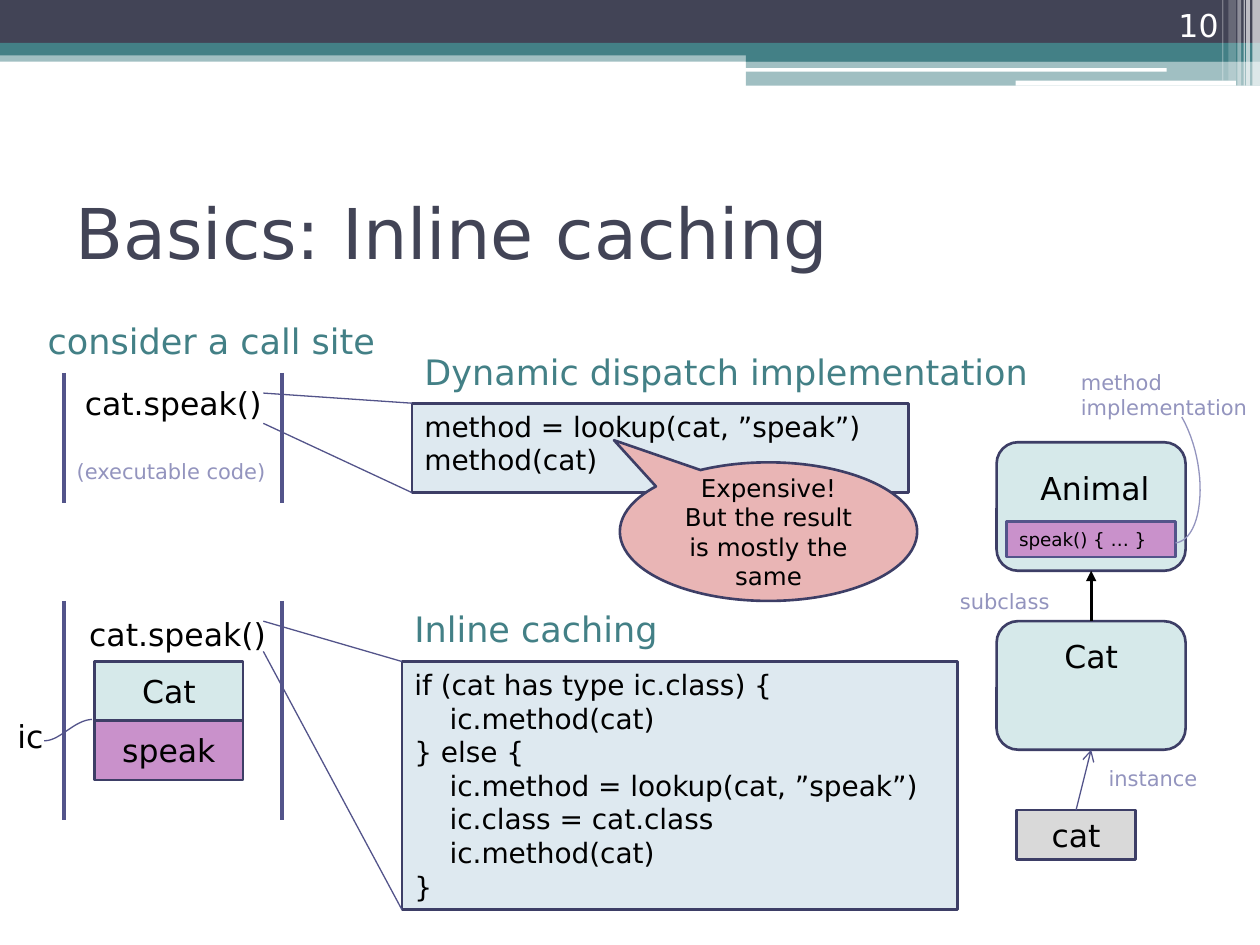
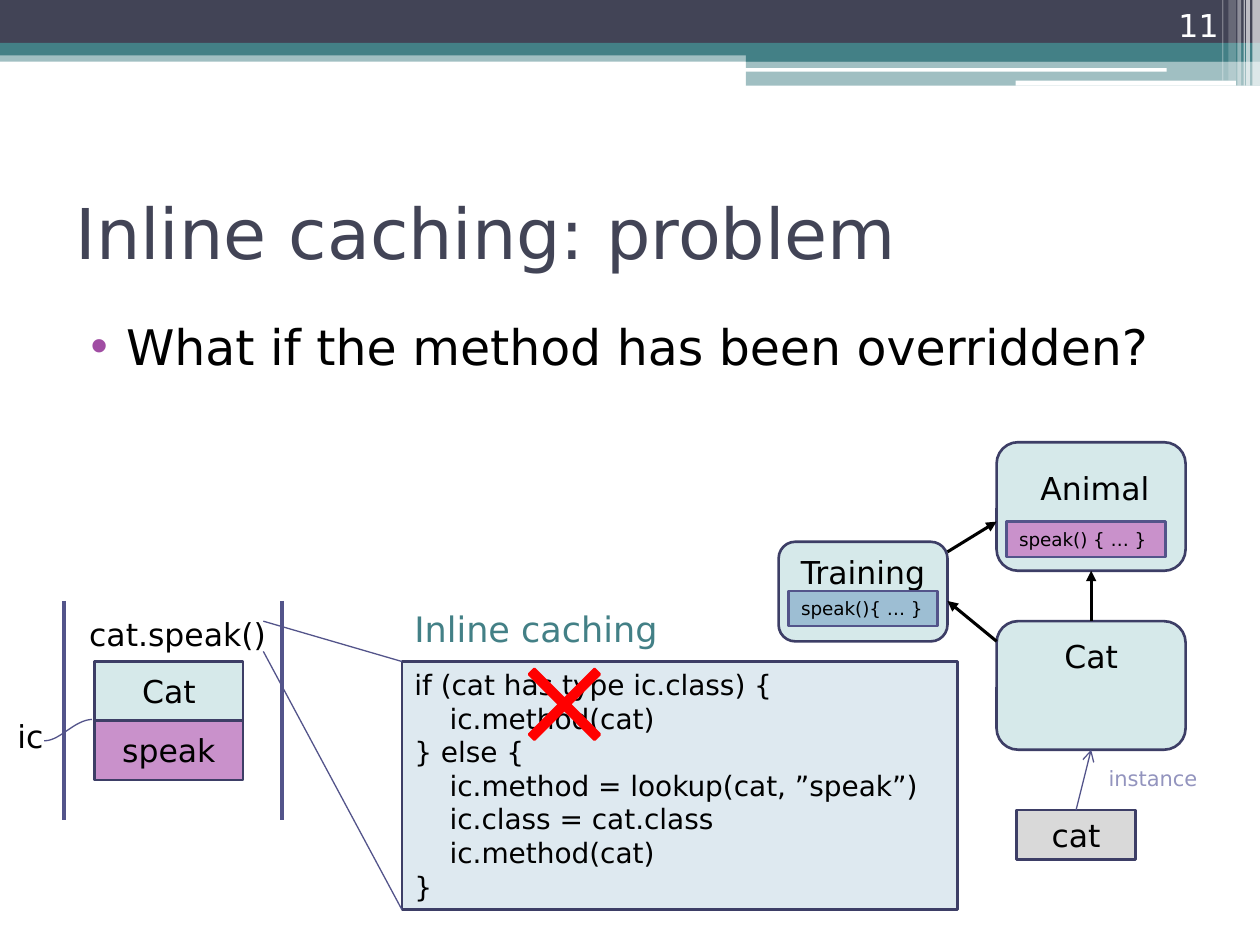
"""Builds two slides on inline caching, with call sites, code panels and a class diagram."""
from dataclasses import dataclass

from lxml.etree import SubElement
from pptx import Presentation
from pptx.dml.color import RGBColor
from pptx.enum.shapes import MSO_CONNECTOR, MSO_SHAPE as Kind
from pptx.enum.text import MSO_ANCHOR as Anchor, MSO_AUTO_SIZE as AutoSize, PP_ALIGN as Align
from pptx.oxml.ns import qn
from pptx.util import Inches, Pt


@dataclass(frozen=True)
class Theme:
    font: str = "DejaVu Sans"
    ink: str = "000000"
    paper: str = "FFFFFF"
    slate: str = "424456"
    teal: str = "438086"
    edge: str = "3D3E66"
    rail: str = "53548A"
    note: str = "9394BE"
    code_fill: str = "DEE9F0"
    class_fill: str = "D6E9EA"
    method_fill: str = "C991CB"
    override_fill: str = "9DBED3"
    object_fill: str = "D9D9D9"
    callout_fill: str = "E9B5B5"
    bullet: str = "A04DA3"
    cross: str = "FF0000"
    title_size: float = 40
    body_size: float = 28
    heading_size: float = 20
    label_size: float = 18
    code_size: float = 16
    callout_size: float = 14
    note_size: float = 12
    method_size: float = 10.5


THEME = Theme()
INDENT = 0.28

TITLES = {10: "Basics: Inline caching", 11: "Inline caching: problem"}
QUESTION = "What if the method has been overridden?"
CALL = "cat.speak()"
CALLOUT = ["Expensive!", "But the result is mostly the same"]

DISPATCH = {
    "heading": ("Dynamic dispatch implementation", (3.27, 2.73, 5.2, 0.44)),
    "at": (3.27, 3.2, 3.94, 0.71),
    "code": [(0, "method = lookup(cat, ”speak”)"), (0, "method(cat)")],
    "call_edges": (3.12, 3.36),
}
CACHING = {
    "heading": ("Inline caching", (3.19, 4.77, 5.2, 0.44)),
    "at": (3.19, 5.25, 4.41, 1.97),
    "code": [
        (0, "if (cat has type ic.class) {"),
        (1, "ic.method(cat)"),
        (0, "} else {"),
        (1, "ic.method = lookup(cat, ”speak”)"),
        (1, "ic.class = cat.class"),
        (1, "ic.method(cat)"),
        (0, "}"),
    ],
    "call_edges": (4.93, 5.17),
}
CACHE_CELLS = [("Cat", THEME.class_fill), ("speak", THEME.method_fill)]
CLASSES = [("Animal", 3.51, (7.97, 3.67, 1.44, 0.4)), ("Cat", 4.93, (7.97, 5.01, 1.38, 0.4))]
DISPATCH_NOTES = [
    (["(executable code)"], (0.51, 3.59, 1.72, 0.3)),
    (["subclass"], (7.52, 4.62, 0.91, 0.3)),
    (["method", "implementation"], (8.48, 2.88, 1.52, 0.5)),
]
CACHE_CURVE = [(0.73, 5.71), (0.58, 5.72), (0.48, 5.88), (0.35, 5.88)]
METHOD_CURVE = [(9.38, 3.31), (9.6, 3.7), (9.56, 4.28), (9.33, 4.31)]

BANDS = [
    ((0, 0.4, 10, 0.09), THEME.teal, 50),
    ((0, 0, 10, 0.34), THEME.slate, 100),
    ((0, 0.34, 10, 0.1), THEME.teal, 100),
    ((5.92, 0.39, 4.08, 0.1), THEME.teal, 100),
    ((5.92, 0.48, 4.08, 0.2), THEME.teal, 50),
    ((5.91, 0.54, 3.35, 0.03), THEME.paper, 100),
    ((8.06, 0.64, 1.75, 0.04), THEME.paper, 100),
]
STRIPES = [
    (9.94, 0.06, 0.68, 65),
    (9.89, 0.03, 0.68, 65),
    (9.87, 0.01, 0.68, 60),
    (9.82, 0.03, 0.68, 40),
    (9.75, 0.06, 0.64, 20),
    (9.7, 0.01, 0.64, 30),
]


def inches(values):
    return [Inches(value) for value in values]


def rgb(color):
    return RGBColor.from_string(color)


def write(frame, lines, size, color=THEME.ink, align=Align.LEFT, anchor=Anchor.TOP, wrap=True):
    frame.auto_size = AutoSize.NONE
    frame.word_wrap = wrap
    frame.vertical_anchor = anchor
    for number, line in enumerate(lines):
        level, text = line if isinstance(line, tuple) else (0, line)
        para = frame.add_paragraph() if number else frame.paragraphs[0]
        para.text = text
        para.alignment = align
        para.font.name = THEME.font
        para.font.size = Pt(size)
        para.font.color.rgb = rgb(color)
        if level:
            para._p.get_or_add_pPr().set("marL", str(Inches(INDENT * level)))


def add_label(page, lines, at, size=THEME.label_size, color=THEME.ink, **style):
    box = page.shapes.add_textbox(*inches(at))
    write(box.text_frame, lines, size, color, **style)


def add_box(page, kind, at, fill, edge=THEME.edge, lines=(), size=THEME.label_size,
            align=Align.CENTER, anchor=Anchor.MIDDLE):
    box = page.shapes.add_shape(kind, *inches(at))
    box.shadow.inherit = False
    box.fill.solid()
    box.fill.fore_color.rgb = rgb(fill)
    if edge:
        box.line.color.rgb = rgb(edge)
        box.line.width = Pt(1.5)
    else:
        box.line.fill.background()
    write(box.text_frame, lines, size, align=align, anchor=anchor)
    return box


def add_line(page, start, end, color=THEME.rail, width=0.75, tail=None):
    line = page.shapes.add_connector(MSO_CONNECTOR.STRAIGHT, *inches(start + end))
    line.line.color.rgb = rgb(color)
    line.line.width = Pt(width)
    properties = line._element.spPr
    if tail:
        SubElement(properties.find(qn("a:ln")), qn("a:tailEnd"), type=tail)
    SubElement(properties, qn("a:effectLst"))
    return line


def add_subclass_arrow(page, start, end):
    return add_line(page, start, end, THEME.ink, 1.75, "triangle")


def add_curve(page, controls, color, steps=24):
    points = []
    for step in range(steps + 1):
        t = step / steps
        weights = ((1 - t) ** 3, 3 * t * (1 - t) ** 2, 3 * t * t * (1 - t), t ** 3)
        points.append(inches(sum(w * point[axis] for w, point in zip(weights, controls))
                             for axis in (0, 1)))
    builder = page.shapes.build_freeform(*points[0])
    builder.add_line_segments(points[1:], close=False)
    curve = builder.convert_to_shape()
    curve.shadow.inherit = False
    curve.fill.background()
    curve.line.color.rgb = rgb(color)
    curve.line.width = Pt(0.75)


def add_band(page, at, color, opacity):
    band = add_box(page, Kind.RECTANGLE, at, color, edge=None)
    if opacity < 100:
        tint = band._element.spPr.find(qn("a:solidFill")).find(qn("a:srgbClr"))
        SubElement(tint, qn("a:alpha"), val=str(opacity * 1000))


def place(holder, at):
    holder.left, holder.top, holder.width, holder.height = inches(at)


def start_page(deck, number, layout):
    page = deck.slides.add_slide(deck.slide_layouts[layout])
    for band in BANDS:
        add_band(page, *band)
    for left, width, height, opacity in STRIPES:
        add_band(page, (left, 0, width, height), THEME.paper, opacity)
    title = page.shapes.title
    place(title, (0.5, 1.25, 9, 1.17))
    write(title.text_frame, [TITLES[number]], THEME.title_size, THEME.slate, anchor=Anchor.MIDDLE)
    add_label(page, [str(number)], (8.94, 0, 0.83, 0.4), color=THEME.paper,
              align=Align.RIGHT, anchor=Anchor.BOTTOM)
    return page


def add_rails(page, top, bottom):
    for x in (0.51, 2.24):
        add_line(page, (x, top), (x, bottom), width=2)


def add_panel(page, panel):
    heading, heading_at = panel["heading"]
    left, top, _, height = panel["at"]
    add_box(page, Kind.RECTANGLE, panel["at"], THEME.code_fill, lines=panel["code"],
            size=THEME.code_size, align=Align.LEFT, anchor=Anchor.TOP)
    add_label(page, [heading], heading_at, THEME.heading_size, THEME.teal)
    for call_y, panel_y in zip(panel["call_edges"], (top, top + height)):
        add_line(page, (2.09, call_y), (left, panel_y))


def add_inline_cache(page):
    add_label(page, ["ic"], (0.04, 5.64, 0.4, 0.4), wrap=False)
    add_curve(page, CACHE_CURVE, THEME.rail)
    add_rails(page, 4.77, 6.51)
    add_label(page, [CALL], (0.59, 4.83, 1.64, 0.29), align=Align.CENTER, wrap=False)
    add_panel(page, CACHING)
    for row, (text, fill) in enumerate(CACHE_CELLS):
        add_box(page, Kind.RECTANGLE, (0.75, 5.25 + 0.47 * row, 1.18, 0.47), fill, lines=[text])


def add_method(page, text, at, fill):
    add_box(page, Kind.RECTANGLE, at, fill, THEME.rail, [text], THEME.method_size,
            Align.LEFT, Anchor.TOP)


def add_class_diagram(page, method_width):
    boxes = []
    for name, top, label_at in CLASSES:
        boxes.append(add_box(page, Kind.ROUNDED_RECTANGLE, (7.91, top, 1.5, 1.02),
                             THEME.class_fill))
        add_label(page, [name], label_at, align=Align.CENTER)
    animal, cat_class = boxes
    inherits = add_subclass_arrow(page, (8.66, 4.93), (8.66, 4.53))
    inherits.begin_connect(cat_class, 0)
    inherits.end_connect(animal, 2)
    cat = add_box(page, Kind.FLOWCHART_PROCESS, (8.07, 6.43, 0.94, 0.39), THEME.object_fill,
                  lines=["cat"])
    instance = add_line(page, (8.54, 6.43), (8.66, 5.95), tail="arrow")
    instance.begin_connect(cat, 0)
    instance.end_connect(cat_class, 2)
    add_label(page, ["instance"], (8.7, 6.03, 0.9, 0.3), THEME.note_size, THEME.note, wrap=False)
    add_method(page, "speak() { … }", (7.99, 4.14, method_width, 0.28), THEME.method_fill)


def build_basics(deck):
    page = start_page(deck, 10, 5)
    add_label(page, ["consider a call site"], (0.28, 2.49, 4.02, 0.44),
              THEME.heading_size, THEME.teal)
    add_rails(page, 2.96, 3.99)
    add_label(page, [CALL], (0.43, 3, 1.89, 0.4), align=Align.CENTER)
    add_panel(page, DISPATCH)
    add_inline_cache(page)
    callout = add_box(page, Kind.OVAL_CALLOUT, (4.92, 3.67, 2.36, 1.1), THEME.callout_fill,
                      lines=CALLOUT, size=THEME.callout_size)
    callout.adjustments[0], callout.adjustments[1] = -0.52, -0.66
    add_class_diagram(page, 1.34)
    for lines, at in DISPATCH_NOTES:
        add_label(page, lines, at, THEME.note_size, THEME.note, wrap=False)
    add_curve(page, METHOD_CURVE, THEME.note)


def build_problem(deck):
    page = start_page(deck, 11, 1)
    body = page.placeholders[1]
    place(body, (0.5, 2.46, 9, 4.73))
    write(body.text_frame, [QUESTION], THEME.body_size)
    para = body.text_frame.paragraphs[0]
    para.space_before = Pt(3)
    properties = para._p.get_or_add_pPr()
    properties.set("marL", str(Inches(0.4)))
    properties.set("indent", str(Inches(-0.28)))
    bullet_color = properties.makeelement(qn("a:buClr"), {})
    SubElement(bullet_color, qn("a:srgbClr"), val=THEME.bullet)
    bullet = properties.makeelement(qn("a:buChar"), {"char": "•"})
    properties.find(qn("a:defRPr")).addprevious(bullet_color)
    bullet_color.addnext(bullet)

    add_inline_cache(page)
    add_class_diagram(page, 1.26)
    add_box(page, Kind.ROUNDED_RECTANGLE, (6.18, 4.3, 1.34, 0.79), THEME.class_fill,
            lines=["Training"], anchor=Anchor.TOP)
    add_subclass_arrow(page, (7.91, 5.09), (7.52, 4.77))
    add_subclass_arrow(page, (7.52, 4.38), (7.91, 4.14))
    add_method(page, "speak(){ … }", (6.26, 4.69, 1.18, 0.28), THEME.override_fill)
    cross = add_box(page, Kind.MATH_MULTIPLY, (3.98, 5.09, 1, 1), THEME.cross, THEME.cross)
    cross.adjustments[0] = 0.06


def main():
    deck = Presentation()
    deck.slide_width, deck.slide_height = inches((10, 7.5))
    build_basics(deck)
    build_problem(deck)
    deck.save("out.pptx")


if __name__ == "__main__":
    main()
